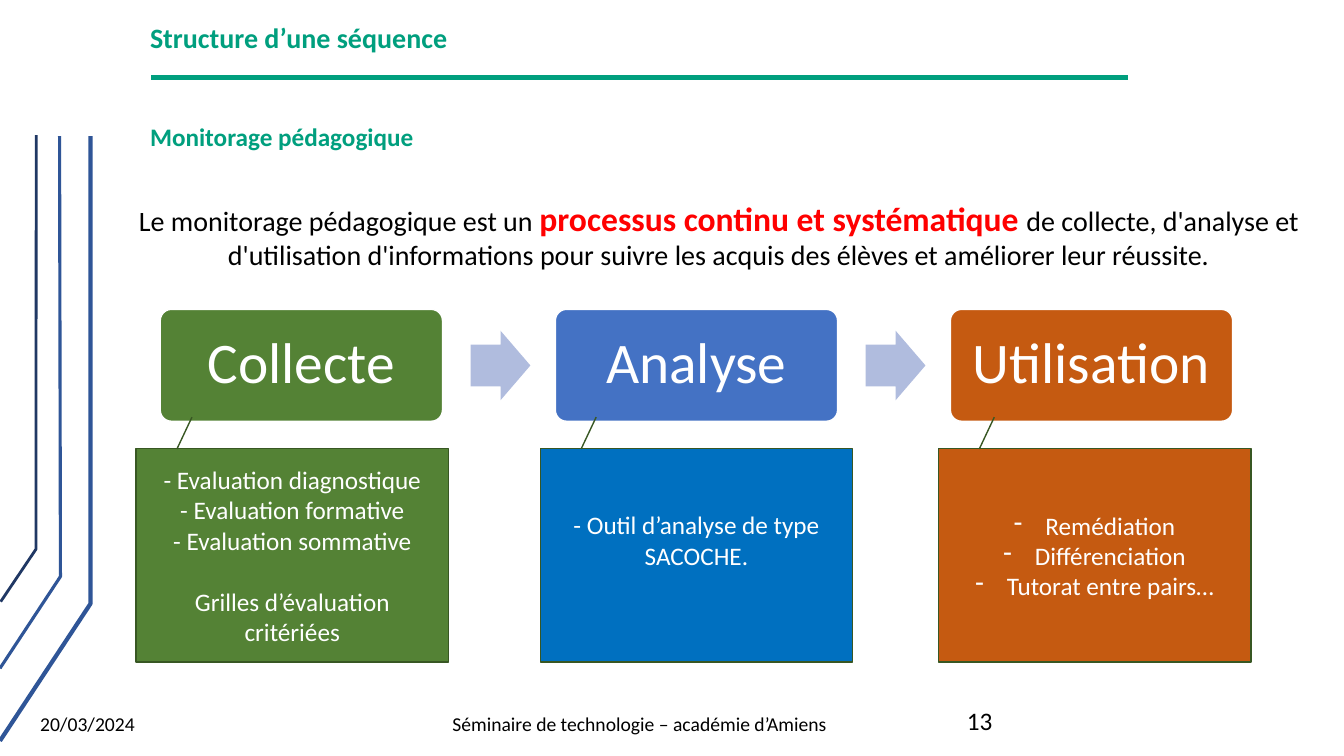
from lxml.etree import SubElement
from pptx import Presentation
from pptx.dml.color import RGBColor
from pptx.enum.shapes import MSO_CONNECTOR, MSO_SHAPE
from pptx.enum.text import MSO_ANCHOR, PP_ALIGN
from pptx.oxml.ns import qn
from pptx.util import Pt

GREEN, BLUE, RUST = "548235", "4472C4", "C55A11"
TEAL, WHITE, BLACK = "009F7E", "FFFFFF", "000000"
STEPS = [
    ("Collecte", GREEN, GREEN, 97.2),
    ("Analyse", BLUE, "0070C0", 385.9),
    ("Utilisation", RUST, RUST, 670.3),
]
DETAILS = [
    ["- Evaluation diagnostique", "- Evaluation formative",
     "- Evaluation sommative", "Grilles d’évaluation critériées"],
    ["- Outil d’analyse de type SACOCHE."],
    ["Remédiation", "Différenciation", "Tutorat entre pairs…"],
]
STEP_LEFT, STEP_PITCH = 114.5, 282.2
LINE_HEIGHT = 22


def color(value):
    """Turn a hex string into a colour."""
    return RGBColor.from_string(value)


def style_span(span, size, tint, bold=False):
    """Set the font of one run."""
    span.font.name = "Calibri"
    span.font.size = Pt(size)
    span.font.bold = bold
    span.font.color.rgb = color(tint)


def style_shape(shape, fill=None, line=None, width=1):
    """Set fill and outline and remove the shadow."""
    shape.shadow.inherit = False
    if fill:
        shape.fill.solid()
        shape.fill.fore_color.rgb = color(fill)
    else:
        shape.fill.background()
    if line:
        shape.line.color.rgb = color(line)
        shape.line.width = Pt(width)
    else:
        shape.line.fill.background()


def add_text(page, left, top, width, height, spans, align=PP_ALIGN.LEFT):
    """Add a one-paragraph text box from (text, size, colour, bold) spans."""
    box = page.shapes.add_textbox(Pt(left), Pt(top), Pt(width), Pt(height))
    box.text_frame.word_wrap = True
    para = box.text_frame.paragraphs[0]
    para.alignment = align
    for text, size, tint, bold in spans:
        span = para.add_run()
        span.text = text
        style_span(span, size, tint, bold)


def add_shape(page, kind, left, top, width, height, adjustments):
    """Add a preset shape with its adjustments."""
    shape = page.shapes.add_shape(kind, Pt(left), Pt(top), Pt(width), Pt(height))
    for index, value in enumerate(adjustments):
        shape.adjustments[index] = value
    return shape


def fill_text(shape, lines, size):
    """Write centred white lines in a shape."""
    frame = shape.text_frame
    frame.word_wrap = True
    frame.vertical_anchor = MSO_ANCHOR.MIDDLE
    frame.text = "\n".join(lines)
    for para in frame.paragraphs:
        para.alignment = PP_ALIGN.CENTER
        style_span(para.runs[0], size, WHITE)


def add_bullet(para):
    """Give a paragraph a hanging dash."""
    properties = para._p.get_or_add_pPr()
    properties.set("marL", str(Pt(22.5)))
    properties.set("indent", str(Pt(-22.5)))
    SubElement(properties, qn("a:buChar")).set("char", "-")


def add_strand(page, points, tint, width):
    """Draw an open bent line."""
    start, *others = [(Pt(x), Pt(y)) for x, y in points]
    builder = page.shapes.build_freeform(*start)
    builder.add_line_segments(others, close=False)
    style_shape(builder.convert_to_shape(), line=tint, width=width)


def add_rule(page, left, right, y):
    """Draw the line under the title."""
    rule = page.shapes.add_connector(
        MSO_CONNECTOR.STRAIGHT, Pt(left), Pt(y), Pt(right), Pt(y))
    rule.line.color.rgb = color(TEAL)
    rule.line.width = Pt(3)
    SubElement(rule._element.spPr, qn("a:effectLst"))


def add_step(page, left, title, fill):
    """Add one step of the process."""
    step = add_shape(page, MSO_SHAPE.ROUNDED_RECTANGLE, left, 221, 201.6, 79.9, [0.1])
    style_shape(step, fill, WHITE)
    fill_text(step, [title], 41)
    step.text_frame.paragraphs[0].line_spacing = 0.9


def add_arrow(page, left):
    """Add the arrow between two steps."""
    arrow = add_shape(page, MSO_SHAPE.RIGHT_ARROW, left, 236.2, 42.7, 49.7, [0.6, 0.5])
    style_shape(arrow, "B0BCDE")


def add_callout(page, left, fill, lines):
    """Add the callout that details a step."""
    callout = add_shape(page, MSO_SHAPE.LINE_CALLOUT_1, left, 320.4, 223.2, 152.6,
                        [0.002, 0.131, -0.147, 0.179])
    style_shape(callout, fill, "385723")
    fill_text(callout, lines, 18)
    return callout.text_frame


def main():
    """Build the slide and save it."""
    deck = Presentation()
    deck.slide_width, deck.slide_height = Pt(960), Pt(540)
    page = deck.slides.add_slide(deck.slide_layouts[6])

    add_strand(page, [(0, 529.2), (64.6, 431.3), (64.6, 97.2)], "2F5597", 3)
    add_strand(page, [(0, 477.4), (43.2, 411.8), (42.6, 97.2)], "2F5597", 2.25)
    add_strand(page, [(0.5, 429.8), (25.7, 392.4), (25.9, 96.5)], "203864", 2)

    add_text(page, 316, 504.7, 290, 24.5,
             [("Séminaire de technologie – académie d’Amiens", 14, BLACK, False)])
    add_text(page, 21.6, 504.7, 102, 24.5, [("20/03/2024", 14, BLACK, False)])
    add_text(page, 683.5, 500.4, 216, 28.8, [("13", 18, BLACK, False)])
    add_rule(page, 108, 805.7, 55.4)
    add_text(page, 100.1, 10.8, 850, 31.7, [("Structure d’une séquence", 20, TEAL, True)])
    add_text(page, 100.1, 82.8, 850, 28.8, [("Monitorage pédagogique", 18, TEAL, True)])
    add_text(page, 80, 137.5, 867, 104.4, [
        ("Le monitorage pédagogique est un ", 20, BLACK, False),
        ("processus continu et systématique ", 24, "FF0000", True),
        ("de collecte, d'analyse et d'utilisation d'informations pour suivre "
         "les acquis des élèves et améliorer leur réussite.", 20, BLACK, False),
    ], PP_ALIGN.CENTER)

    frames = []
    for index, (title, fill, callout_fill, callout_left) in enumerate(STEPS):
        left = STEP_LEFT + index * STEP_PITCH
        add_step(page, left, title, fill)
        if index < len(STEPS) - 1:
            add_arrow(page, left + 221.7)
        frames.append(add_callout(page, callout_left, callout_fill, DETAILS[index]))

    collect, analyse, use = frames
    collect.paragraphs[-1].space_before = Pt(LINE_HEIGHT)
    analyse.margin_bottom = Pt(3.6 + LINE_HEIGHT)
    for para in use.paragraphs:
        add_bullet(para)

    deck.save("out.pptx")


if __name__ == "__main__":
    main()
